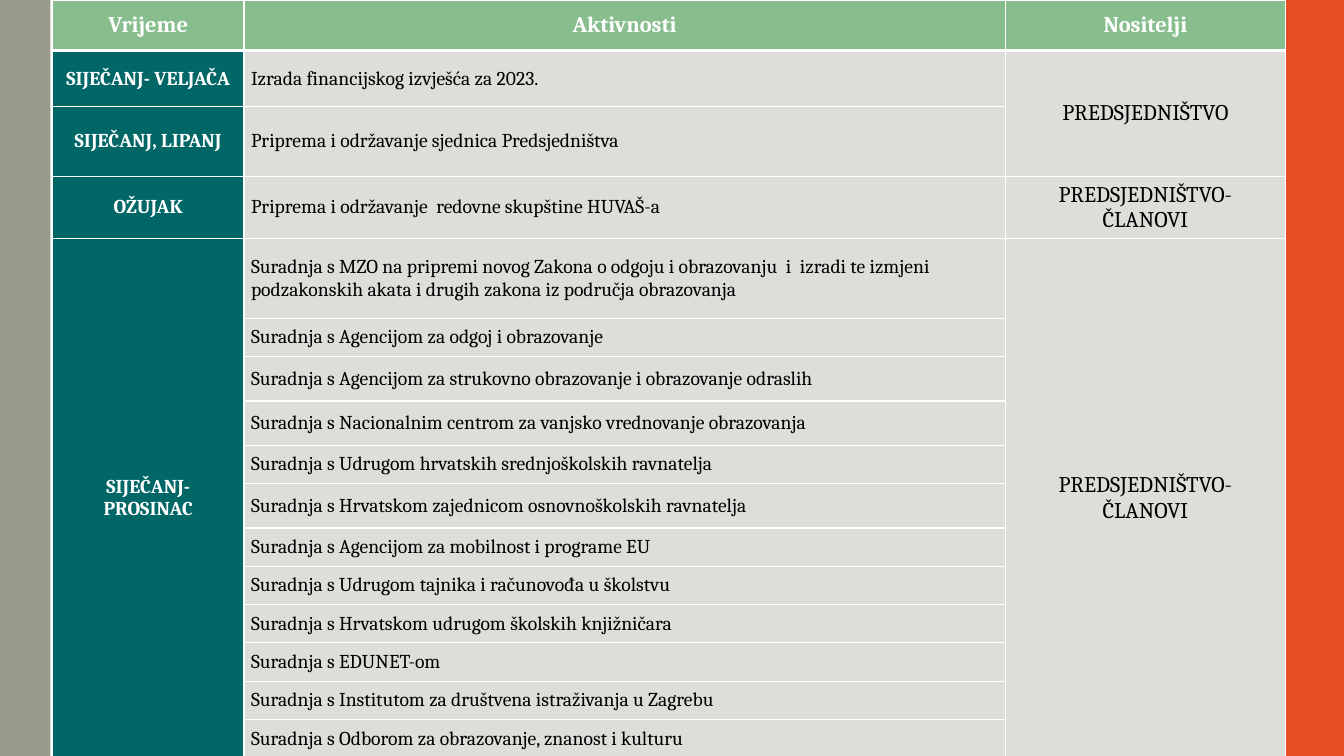
from pptx import Presentation
from pptx.dml.color import RGBColor
from pptx.enum.shapes import MSO_SHAPE as Shape
from pptx.enum.text import MSO_ANCHOR as Anchor, PP_ALIGN as Align
from pptx.oxml import parse_xml
from pptx.oxml.ns import nsdecls
from pptx.util import Inches, Pt

WHITE, BLACK = "FFFFFF", "000000"
GREEN, TEAL, GREY = "88BE8E", "006666", "DDDDD9"
ORANGE, STONE = "E84C22", "9A9A8C"

HEADS = ["Vrijeme", "Aktivnosti", "Nositelji"]
COLS = [1.9, 7.55, 2.78]

# Activities with their row heights
TASKS = [
    ("Izrada financijskog izvješća za 2023.", 0.56),
    ("Priprema i održavanje sjednica Predsjedništva", 0.69),
    ("Priprema i održavanje  redovne skupštine HUVAŠ-a", 0.62),
    ("Suradnja s MZO na pripremi novog Zakona o odgoju i obrazovanju  i  "
     "izradi te izmjeni podzakonskih akata i drugih zakona iz područja "
     "obrazovanja", 0.79),
    ("Suradnja s Agencijom za odgoj i obrazovanje", 0.38),
    ("Suradnja s Agencijom za strukovno obrazovanje i obrazovanje odraslih", 0.44),
    ("Suradnja s Nacionalnim centrom za vanjsko vrednovanje obrazovanja", 0.44),
    ("Suradnja s Udrugom hrvatskih srednjoškolskih ravnatelja", 0.38),
    ("Suradnja s Hrvatskom zajednicom osnovnoškolskih ravnatelja", 0.44),
    ("Suradnja s Agencijom za mobilnost i programe EU", 0.38),
    ("Suradnja s Udrugom tajnika i računovođa u školstvu", 0.38),
    ("Suradnja s Hrvatskom udrugom školskih knjižničara", 0.38),
    ("Suradnja s EDUNET-om", 0.38),
    ("Suradnja s Institutom za društvena istraživanja u Zagrebu", 0.38),
    ("Suradnja s Odborom za obrazovanje, znanost i kulturu", 0.38),
]

# Merged blocks: first row, last row, text
TIMES = [(1, 1, "SIJEČANJ- VELJAČA"), (2, 2, "SIJEČANJ, LIPANJ"),
         (3, 3, "OŽUJAK"), (4, 15, "SIJEČANJ- PROSINAC")]
HOLDERS = [(1, 2, "PREDSJEDNIŠTVO"), (3, 3, "PREDSJEDNIŠTVO- ČLANOVI"),
           (4, 15, "PREDSJEDNIŠTVO- ČLANOVI")]


def color(code):
    return RGBColor.from_string(code)


class Plan:
    font = "Cambria"

    def __init__(self, slide):
        self.slide = slide

    def bar(self, left, width, fill):
        bar = self.slide.shapes.add_shape(
            Shape.RECTANGLE, Inches(left), 0, Inches(width), Inches(7.5))
        bar.shadow.inherit = False
        bar.fill.solid()
        bar.fill.fore_color.rgb = color(fill)
        bar.line.fill.background()

    def grid(self, left, top, cols, rows):
        frame = self.slide.shapes.add_table(
            len(rows), len(cols), Inches(left), Inches(top),
            Inches(sum(cols)), Inches(sum(rows)))
        table = frame.table
        table.horz_banding = False
        for col, width in zip(table.columns, cols):
            col.width = Inches(width)
        for row, height in zip(table.rows, rows):
            row.height = Inches(height)
        return table

    def edges(self, cell, top=1, bottom=1):
        props = cell._tc.get_or_add_tcPr()
        sides = [("L", 1), ("R", 1), ("T", top), ("B", bottom)]
        for spot, (side, width) in enumerate(sides):
            props.insert(spot, parse_xml(
                f'<a:ln{side} {nsdecls("a")} w="{Pt(width)}"><a:solidFill>'
                f'<a:srgbClr val="{WHITE}"/></a:solidFill></a:ln{side}>'))

    def cell(self, cell, text, fill, size, ink=BLACK, bold=False,
             align=Align.CENTER):
        cell.fill.solid()
        cell.fill.fore_color.rgb = color(fill)
        cell.vertical_anchor = Anchor.MIDDLE
        cell.text = text
        para = cell.text_frame.paragraphs[0]
        para.alignment = align
        font = para.font
        font.name, font.size, font.bold = self.font, Pt(size), bold
        font.color.rgb = color(ink)

    def tight(self, cell):
        cell.margin_left = cell.margin_right = Inches(0.07)
        cell.margin_top = cell.margin_bottom = 0

    def block(self, table, col, first, last, *look, **more):
        cell = table.cell(first, col)
        if last > first:
            cell.merge(table.cell(last, col))
        self.cell(cell, *look, **more)


def main():
    deck = Presentation()
    deck.slide_width, deck.slide_height = Inches(13.33), Inches(7.5)
    plan = Plan(deck.slides.add_slide(deck.slide_layouts[6]))

    # Side bars
    plan.bar(12.35, 0.98, ORANGE)
    plan.bar(0, 0.5, STONE)

    # Table frame and borders
    rows = [0.5] + [height for _, height in TASKS]
    table = plan.grid(0.52, 0, COLS, rows)
    for row in range(len(rows)):
        for col in range(len(COLS)):
            plan.edges(table.cell(row, col), top=3 if row == 1 else 1,
                       bottom=3 if row == 0 else 1)
        plan.tight(table.cell(row, 1))

    # Header row
    for col, text in enumerate(HEADS):
        plan.cell(table.cell(0, col), text, GREEN, 16, WHITE, True)

    # Times, activities and holders
    for first, last, text in TIMES:
        plan.block(table, 0, first, last, text, TEAL, 14, WHITE, True)
    for row, (text, _) in enumerate(TASKS, 1):
        plan.cell(table.cell(row, 1), text, GREY, 14, align=Align.LEFT)
    for first, last, text in HOLDERS:
        plan.block(table, 2, first, last, text, GREY, 16)

    deck.save("out.pptx")


if __name__ == "__main__":
    main()
